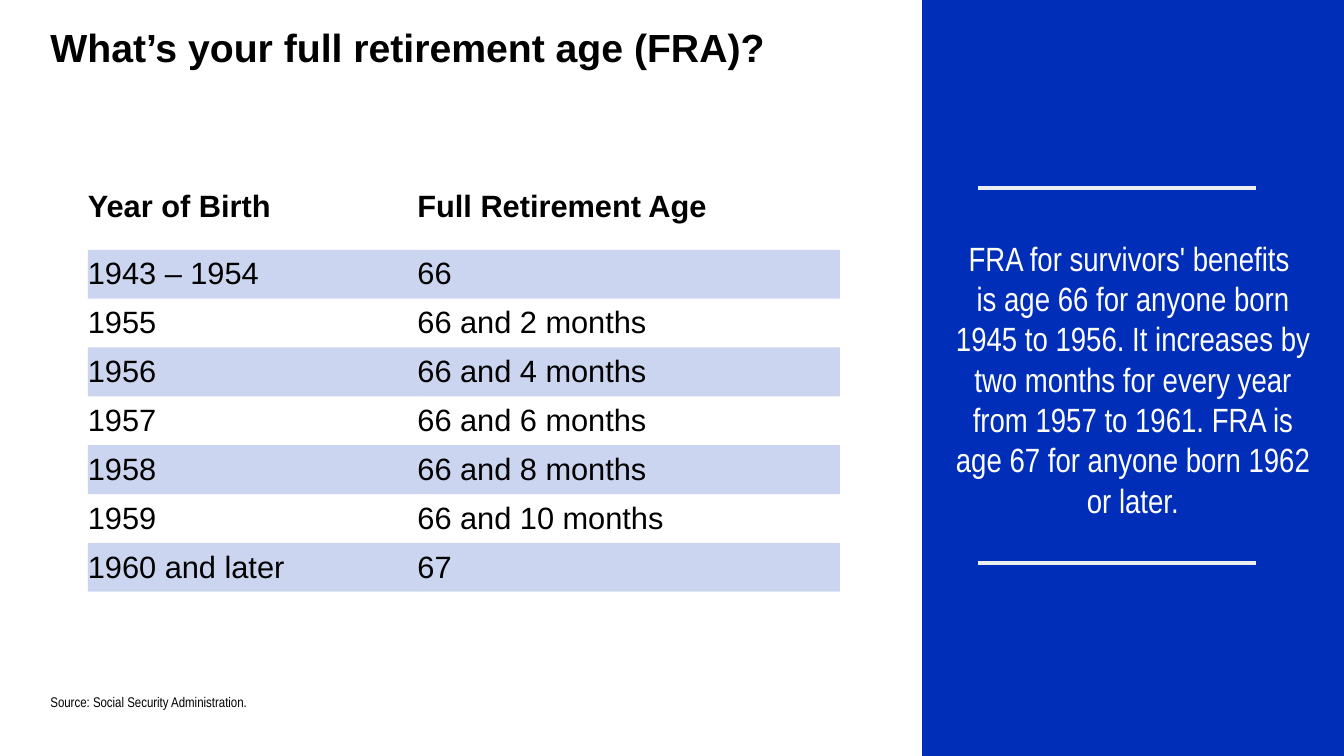
from dataclasses import dataclass

from pptx import Presentation
from pptx.dml.color import RGBColor
from pptx.enum.shapes import MSO_CONNECTOR, MSO_SHAPE
from pptx.enum.text import MSO_ANCHOR, MSO_AUTO_SIZE, PP_ALIGN
from pptx.oxml.ns import qn
from pptx.util import Pt
from lxml.etree import SubElement


@dataclass(frozen=True)
class Theme:
    blue: RGBColor = RGBColor(0x00, 0x2E, 0xB8)
    rule: RGBColor = RGBColor(0xEC, 0xED, 0xEE)
    black: RGBColor = RGBColor(0, 0, 0)
    white: RGBColor = RGBColor(255, 255, 255)
    font: str = "Arial"
    narrow: str = "Arial Narrow"
    title: int = 28
    callout: int = 24
    table: int = 22
    source: int = 10


T = Theme()


def style(p, size, color, name, bold=False, align=PP_ALIGN.LEFT):
    p.alignment = align
    p.font.size, p.font.name, p.font.bold = Pt(size), name, bold
    p.font.color.rgb = color


def frame(tf, anchor, inset=None):
    tf.word_wrap = True
    tf.auto_size = MSO_AUTO_SIZE.NONE
    tf.vertical_anchor = anchor
    if inset is not None:
        tf.margin_left = tf.margin_top = tf.margin_right = tf.margin_bottom = Pt(inset)


prs = Presentation()
prs.slide_width, prs.slide_height = Pt(960), Pt(540)
s = prs.slides.add_slide(prs.slide_layouts[5])

# Title
title = s.shapes.title
title.left, title.top, title.width, title.height = Pt(36), Pt(16.8), Pt(740), Pt(34)
title.text_frame.text = "What’s your full retirement age (FRA)?"
frame(title.text_frame, MSO_ANCHOR.MIDDLE, 0)
style(title.text_frame.paragraphs[0], T.title, T.black, T.font, bold=True)

# Retirement age table
ages = [
    ("Year of Birth", "Full Retirement Age"),
    ("1943 – 1954", "66"),
    ("1955", "66 and 2 months"),
    ("1956", "66 and 4 months"),
    ("1957", "66 and 6 months"),
    ("1958", "66 and 8 months"),
    ("1959", "66 and 10 months"),
    ("1960 and later", "67"),
]
HEADER_H, ROW_H = 61.2, 34.9
COL_W = (235.4, 301.7)
sp = s.shapes.add_table(len(ages), 2, Pt(62.8), Pt(117.2), Pt(sum(COL_W)),
                        Pt(HEADER_H + ROW_H * (len(ages) - 1)))
table = sp.table
table.first_row = table.horz_banding = False
# "No Style, No Grid" removes the default borders
table._tbl.tblPr.find(qn("a:tableStyleId")).text = "{2D5ABB26-0587-4C30-8999-92F81FD0307C}"
for column, width in zip(table.columns, COL_W):
    column.width = Pt(width)
for i, row in enumerate(ages):
    table.rows[i].height = Pt(ROW_H if i else HEADER_H)
    for j, text in enumerate(row):
        cell = table.cell(i, j)
        cell.text = text
        cell.vertical_anchor = MSO_ANCHOR.MIDDLE
        cell.margin_left = cell.margin_top = cell.margin_bottom = 0
        cell.margin_right = Pt(3.6 if j else 6.5)
        style(cell.text_frame.paragraphs[0], T.table, T.black, T.font, bold=i == 0)
        if i % 2:
            cell.fill.solid()
            cell.fill.fore_color.rgb = T.blue
            clr = cell._tc.tcPr.find(qn("a:solidFill")).find(qn("a:srgbClr"))
            SubElement(clr, qn("a:alpha"), val="20000")
        else:
            cell.fill.background()

# Blue side panel
panel = s.shapes.add_shape(MSO_SHAPE.RECTANGLE, Pt(658.6), 0, Pt(301.4), Pt(540))
panel.shadow.inherit = False
panel.fill.solid()
panel.fill.fore_color.rgb = T.blue
panel.line.fill.background()

# Rules above and below the callout
for y in (134.3, 402.2):
    rule = s.shapes.add_connector(MSO_CONNECTOR.STRAIGHT, Pt(698.6), Pt(y), Pt(897.1), Pt(y))
    rule.line.color.rgb = T.rule
    rule.line.width = Pt(3)
    SubElement(rule._element.spPr, qn("a:effectLst"))

# Callout
tf = s.shapes.add_textbox(Pt(675.2), Pt(165), Pt(268), Pt(211)).text_frame
frame(tf, MSO_ANCHOR.MIDDLE)
tf.text = ("FRA for survivors' benefits \n"
           "is age 66 for anyone born 1945 to 1956. It increases by two months for every "
           "year from 1957 to 1961. FRA is age 67 for anyone born 1962 or later.")
for p in tf.paragraphs:
    style(p, T.callout, T.white, T.narrow, align=PP_ALIGN.CENTER)

# Source note
tf = s.shapes.add_textbox(Pt(36), Pt(465), Pt(888), Pt(42.6)).text_frame
frame(tf, MSO_ANCHOR.BOTTOM, 0)
tf.text = "Source: Social Security Administration."
style(tf.paragraphs[0], T.source, T.black, T.narrow)
tf.paragraphs[0].space_after = Pt(1.5)

prs.save("out.pptx")
